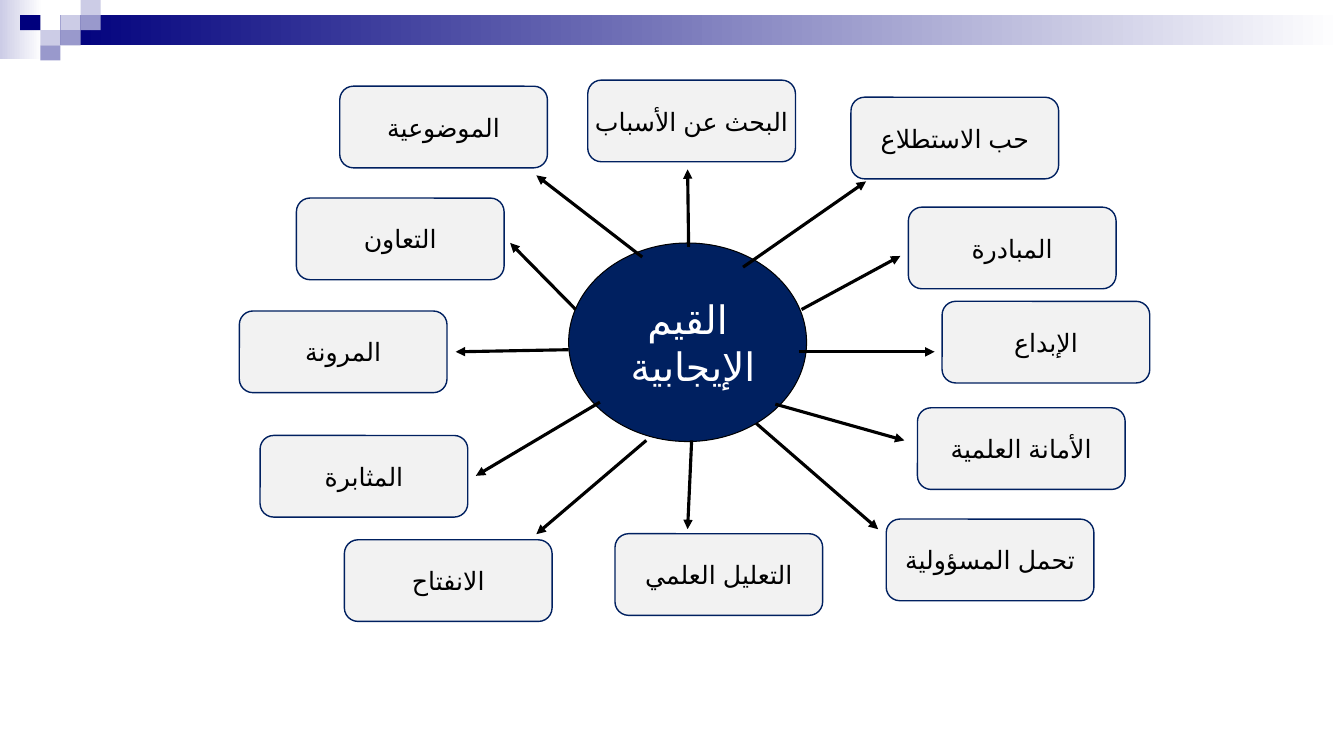
import pptx
import pptx.util
import pptx.dml.color
import pptx.enum.lang
import pptx.enum.shapes
import pptx.enum.text
import pptx.oxml.ns
from dataclasses import dataclass
from lxml import etree

MSO = pptx.enum.shapes.MSO_SHAPE


@dataclass(frozen=True)
class Theme:
    font: str = "Arial"
    hub_size: int = 28
    value_size: int = 18
    arrow_width: float = 2.25
    hub_line_width: float = 0.75
    value_line_width: float = 1
    navy: str = "002060"
    indigo: str = "00007D"
    lilac: str = "9999CC"
    pale: str = "CCCCE6"
    grey: str = "F2F2F2"
    black: str = "000000"
    white: str = "FFFFFF"


THEME = Theme()
COL, ROW = 0.2, 0.15
BOX_COLS, BOX_ROWS = 10.3, 5.4
HUB = (28.2, 16.07, 11.8, 13.13)

VALUES = [
    ("حب الاستطلاع", (42.2, 6.43), (36.85, 17.67), (42.95, 12)),
    ("المبادرة", (45.05, 13.7), (39.75, 20.47), (44.65, 16.93)),
    ("الإبداع", (46.72, 19.93), (39.6, 23.27), (46.35, 23.27)),
    ("الأمانة العلمية", (45.5, 26.97), (38.45, 26.73), (44.85, 29.13)),
    ("تحمل المسؤولية", (43.95, 34.33), (37.5, 28), (43.55, 35)),
    ("التعليل العلمي", (30.5, 35.3), (34.3, 29.13), (34.1, 35)),
    ("الانفتاح", (17.08, 35.7), (32.05, 29.13), (26.6, 35.33)),
    ("المثابرة", (12.9, 28.8), (29.75, 26.6), (23.6, 31.47)),
    ("المرونة", (11.87, 20.57), (28.2, 23.13), (22.6, 23.27)),
    ("التعاون", (14.7, 13.1), (28.55, 20.47), (25.3, 16.07)),
    ("الموضوعية", (16.85, 5.7), (31.85, 17), (26.6, 11.6)),
    ("البحث عن الأسباب", (29.15, 5.3), (34.15, 16.33), (34.1, 11.2)),
]

SQUARES = [
    (3, 1, THEME.pale), (4, 0, THEME.pale), (4, 1, THEME.lilac),
    (2, 2, THEME.pale), (1, 1, THEME.indigo), (3, 2, THEME.lilac),
    (2, 3, THEME.lilac),
]


def rgb(value):
    return pptx.dml.color.RGBColor.from_string(value)


def x(cols):
    return pptx.util.Inches(cols * COL)


def y(rows):
    return pptx.util.Inches(rows * ROW)


def add_block(s, kind, left, top, cols, rows, fill=None, line=None, width=0):
    sp = s.shapes.add_shape(kind, x(left), y(top), x(cols), y(rows))
    sp.shadow.inherit = False
    if fill:
        sp.fill.solid()
        sp.fill.fore_color.rgb = rgb(fill)
    if line:
        sp.line.color.rgb = rgb(line)
        sp.line.width = pptx.util.Pt(width)
    else:
        sp.line.fill.background()
    return sp


def add_fade(s, left, top, cols, rows, start):
    sp = add_block(s, MSO.RECTANGLE, left, top, cols, rows)
    sp.fill.gradient()
    sp.fill.gradient_angle = 0
    for stop, position, color in zip(sp.fill.gradient_stops, (0, 1), (start, THEME.white)):
        stop.position = position
        stop.color.rgb = rgb(color)


def write(sp, lines, size, color):
    tf = sp.text_frame
    tf.word_wrap = False
    tf.vertical_anchor = pptx.enum.text.MSO_ANCHOR.MIDDLE
    for i, text in enumerate(lines):
        p = tf.add_paragraph() if i else tf.paragraphs[0]
        p.alignment = pptx.enum.text.PP_ALIGN.CENTER
        r = p.add_run()
        r.text = text
        r.font.name = THEME.font
        r.font.size = pptx.util.Pt(size)
        r.font.color.rgb = rgb(color)
        r.font.language_id = pptx.enum.lang.MSO_LANGUAGE_ID.ARABIC
        cs = etree.SubElement(r.font._element, pptx.oxml.ns.qn("a:cs"))
        cs.set("typeface", THEME.font)


def add_arrow(s, start, tip):
    c = s.shapes.add_connector(
        pptx.enum.shapes.MSO_CONNECTOR.STRAIGHT,
        x(start[0]), y(start[1]), x(tip[0]), y(tip[1]))
    c.line.color.rgb = rgb(THEME.black)
    c.line.width = pptx.util.Pt(THEME.arrow_width)
    ln = c.line._get_or_add_ln()
    etree.SubElement(ln, pptx.oxml.ns.qn("a:tailEnd")).set("type", "triangle")
    etree.SubElement(c._element.spPr, pptx.oxml.ns.qn("a:effectLst"))


def add_header(s):
    add_fade(s, 0, 0, 2.1, 3.9, THEME.pale)
    add_fade(s, 3, 1, 63.6, 2, THEME.indigo)
    for col, row, color in SQUARES:
        add_block(s, MSO.RECTANGLE, col, row, 1, 1, color)


def add_hub(s):
    sp = add_block(s, MSO.OVAL, *HUB, THEME.navy, THEME.black, THEME.hub_line_width)
    write(sp, ["القيم", " الإيجابية"], THEME.hub_size, THEME.white)


def add_value(s, label, corner):
    sp = add_block(s, MSO.ROUNDED_RECTANGLE, *corner, BOX_COLS, BOX_ROWS,
                   THEME.grey, THEME.navy, THEME.value_line_width)
    write(sp, [label], THEME.value_size, THEME.black)


def main():
    prs = pptx.Presentation()
    prs.slide_width = pptx.util.Inches(13.33)
    prs.slide_height = pptx.util.Inches(7.5)
    s = prs.slides.add_slide(prs.slide_layouts[6])
    add_header(s)
    add_hub(s)
    for label, corner, start, tip in VALUES:
        add_arrow(s, start, tip)
        add_value(s, label, corner)
    prs.save("out.pptx")


if __name__ == "__main__":
    main()
